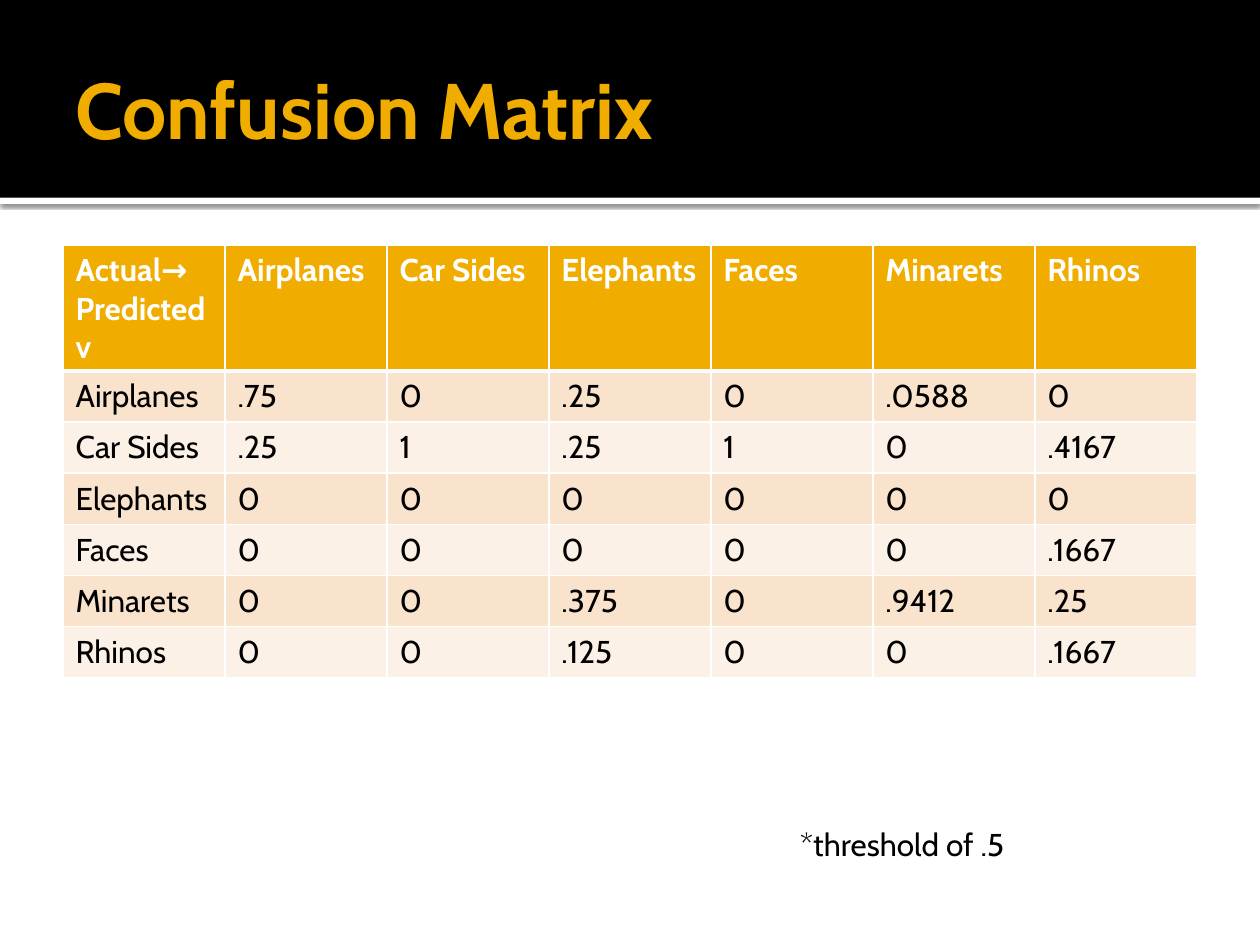
from lxml import etree
from pptx import Presentation
from pptx.dml.color import RGBColor
from pptx.enum.shapes import MSO_SHAPE
from pptx.enum.text import MSO_ANCHOR
from pptx.oxml import parse_xml
from pptx.oxml.ns import nsdecls, qn
from pptx.util import Pt

RECTANGLE = MSO_SHAPE.RECTANGLE
TOP = MSO_ANCHOR.TOP
MIDDLE = MSO_ANCHOR.MIDDLE

BLACK = RGBColor(0x00, 0x00, 0x00)
WHITE = RGBColor(0xFF, 0xFF, 0xFF)
GOLD = RGBColor(0xF0, 0xAD, 0x00)
BAND_DARK = RGBColor(0xF9, 0xE3, 0xCC)
BAND_LIGHT = RGBColor(0xFC, 0xF1, 0xE7)
FONT = "Cabin"

CLASSES = ["Airplanes", "Car Sides", "Elephants", "Faces", "Minarets", "Rhinos"]
RATES = [
    [".75", "0", ".25", "0", ".0588", "0"],
    [".25", "1", ".25", "1", "0", ".4167"],
    ["0", "0", "0", "0", "0", "0"],
    ["0", "0", "0", "0", "0", ".1667"],
    ["0", "0", ".375", "0", ".9412", ".25"],
    ["0", "0", ".125", "0", "0", ".1667"],
]


def write_text(tf, text, size, color, bold=False):
    """Fill a text frame with one paragraph per line of text."""
    for i, line in enumerate(text.split("\n")):
        p = tf.add_paragraph() if i else tf.paragraphs[0]
        r = p.add_run()
        r.text = line
        r.font.name = FONT
        r.font.size = Pt(size)
        r.font.bold = bold
        r.font.color.rgb = color


def add_text(s, box, text, size, color, bold=False, anchor=TOP, right=7.2):
    """Place a wrapping text box."""
    tf = s.shapes.add_textbox(*map(Pt, box)).text_frame
    tf.word_wrap = True
    tf.vertical_anchor = anchor
    tf.margin_right = Pt(right)
    write_text(tf, text, size, color, bold)


def add_bar(s, box, color):
    """Place a plain filled bar."""
    sp = s.shapes.add_shape(RECTANGLE, *map(Pt, box))
    sp.shadow.inherit = False
    sp.fill.solid()
    sp.fill.fore_color.rgb = color
    sp.line.fill.background()
    return sp


def add_header(s, box, title):
    """Place the black title band with a shadowed white strip under it."""
    x, y, w, h = box
    strip = add_bar(s, (x, y + h, w, 3.6), WHITE)
    effects = strip._element.spPr.find(qn("a:effectLst"))
    effects.append(parse_xml(
        f'<a:outerShdw {nsdecls("a")} blurRad="{Pt(2.5)}" dist="{Pt(0.8)}" dir="5400000">'
        '<a:srgbClr val="000000"><a:alpha val="60000"/></a:srgbClr></a:outerShdw>'))
    add_bar(s, box, BLACK)
    add_text(s, (x + 36, y + 12.24, w - 72, 98.64), title, 45, GOLD, True, MIDDLE, 3.6)


def set_borders(cell, top, bottom):
    """Draw white cell borders with the given top and bottom widths."""
    tc_pr = cell._tc.get_or_add_tcPr()
    for side, width in (("L", 1), ("R", 1), ("T", top), ("B", bottom)):
        ln = etree.SubElement(tc_pr, qn(f"a:ln{side}"), w=str(Pt(width)))
        fill = etree.SubElement(ln, qn("a:solidFill"))
        etree.SubElement(fill, qn("a:srgbClr"), val=str(WHITE))


def add_matrix(s, box):
    """Place the confusion matrix with a gold header and banded rows."""
    rows = [["Actual→\nPredictedv"] + CLASSES]
    rows += [[name] + rates for name, rates in zip(CLASSES, RATES)]
    table = s.shapes.add_table(len(rows), len(rows[0]), *map(Pt, box)).table
    for i, row in enumerate(rows):
        header = i == 0
        band = GOLD if header else BAND_DARK if i % 2 else BAND_LIGHT
        for j, text in enumerate(row):
            cell = table.cell(i, j)
            set_borders(cell, 3 if i == 1 else 1, 3 if header else 1)
            cell.fill.solid()
            cell.fill.fore_color.rgb = band
            write_text(cell.text_frame, text, 18, WHITE if header else BLACK, header)


def main():
    """Build and save the slide."""
    prs = Presentation()
    prs.slide_width, prs.slide_height = Pt(720), Pt(540)
    s = prs.slides.add_slide(prs.slide_layouts[6])
    add_header(s, (0, 0, 720, 113), "Confusion Matrix")
    add_matrix(s, (36, 140, 648, 204.4))
    add_text(s, (450, 468, 210, 29), "*threshold of .5", 18, BLACK)
    prs.save("out.pptx")


if __name__ == "__main__":
    main()
